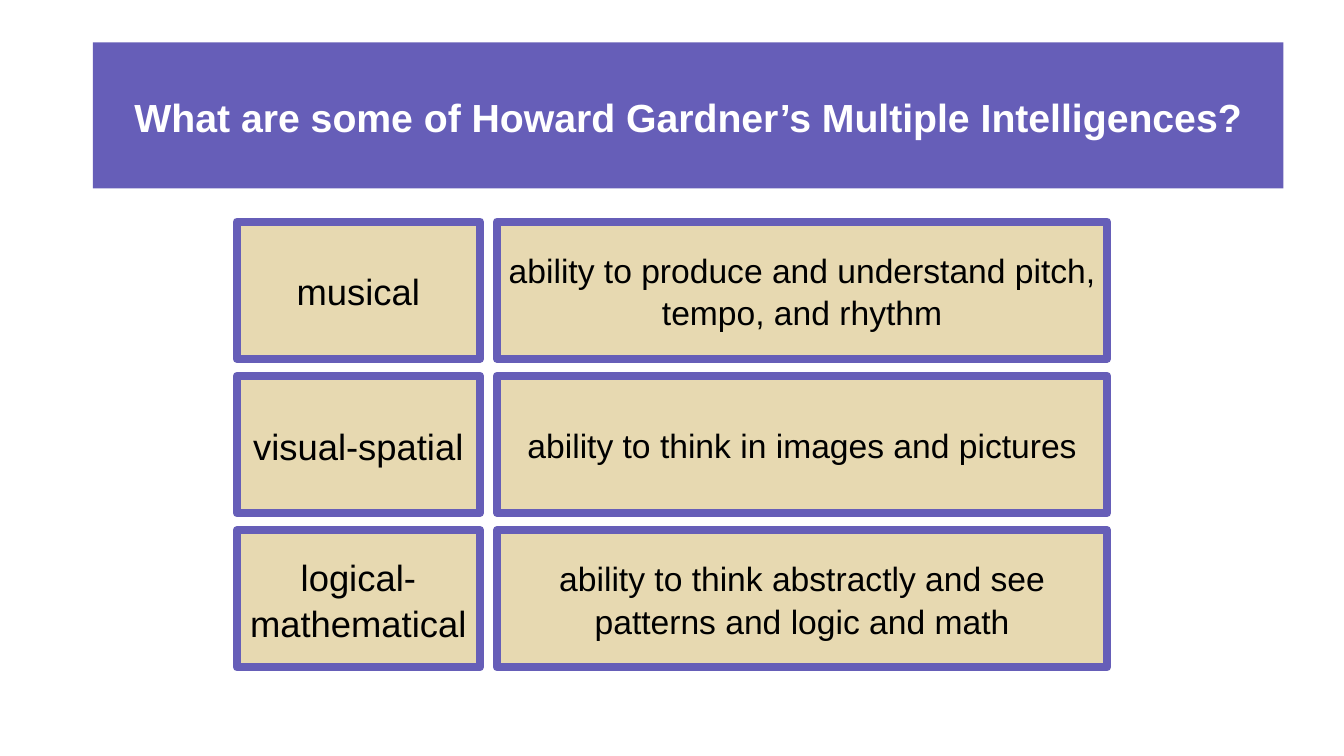
from pptx import Presentation
from pptx.dml.color import RGBColor
from pptx.enum.shapes import MSO_SHAPE as Shape
from pptx.enum.text import MSO_ANCHOR as Anchor, PP_ALIGN as Align
from pptx.util import Inches, Pt

PURPLE = RGBColor(0x66, 0x5E, 0xB8)
SAND = RGBColor(0xE7, 0xD9, 0xB1)
WHITE = RGBColor(0xFF, 0xFF, 0xFF)
BLACK = RGBColor(0x00, 0x00, 0x00)

TITLE = "What are some of Howard Gardner’s Multiple Intelligences?"
INTELLIGENCES = [
    ("musical", "ability to produce and understand pitch, tempo, and rhythm"),
    ("visual-spatial", "ability to think in images and pictures"),
    ("logical-mathematical",
     "ability to think abstractly and see patterns and logic and math"),
]


def add_panel(slide, box, text, size, fill, color, bold=False):
    """Add a filled rectangle with centred text and return it."""
    panel = slide.shapes.add_shape(Shape.RECTANGLE, *map(Inches, box))
    panel.shadow.inherit = False
    panel.fill.solid()
    panel.fill.fore_color.rgb = fill
    panel.line.fill.background()
    frame = panel.text_frame
    frame.word_wrap = True
    frame.vertical_anchor = Anchor.MIDDLE
    frame.text = text
    para = frame.paragraphs[0]
    para.alignment = Align.CENTER
    para.line_spacing = 1.05
    font = para.runs[0].font
    font.name, font.size, font.bold = "Arial", Pt(size), bold
    font.color.rgb = color
    return panel


def add_title(slide, box):
    """Add the title banner."""
    add_panel(slide, box, TITLE, 28, PURPLE, WHITE, bold=True)


def add_intelligences(slide, box):
    """Add a row of name and ability cards for each intelligence."""
    left, top, width, height = box
    name_width, gap, card_height = 2.41, 0.17, 1.36
    pitch = (height - card_height) / (len(INTELLIGENCES) - 1)
    ability_left = left + name_width + gap
    ability_width = width - name_width - gap
    for row, (name, ability) in enumerate(INTELLIGENCES):
        y = top + row * pitch
        for x, card_width, text, size in (
            (left, name_width, name, 26),
            (ability_left, ability_width, ability, 24),
        ):
            card = add_panel(slide, (x, y, card_width, card_height),
                             text, size, SAND, BLACK)
            card.line.color.rgb = PURPLE
            card.line.width = Pt(6)


def main():
    """Build the deck and save it."""
    deck = Presentation()
    deck.slide_width, deck.slide_height = Inches(13.33), Inches(7.5)
    slide = deck.slides.add_slide(deck.slide_layouts[6])
    add_title(slide, (0.92, 0.42, 11.81, 1.45))
    add_intelligences(slide, (2.35, 2.2, 8.63, 4.42))
    deck.save("out.pptx")


if __name__ == "__main__":
    main()
